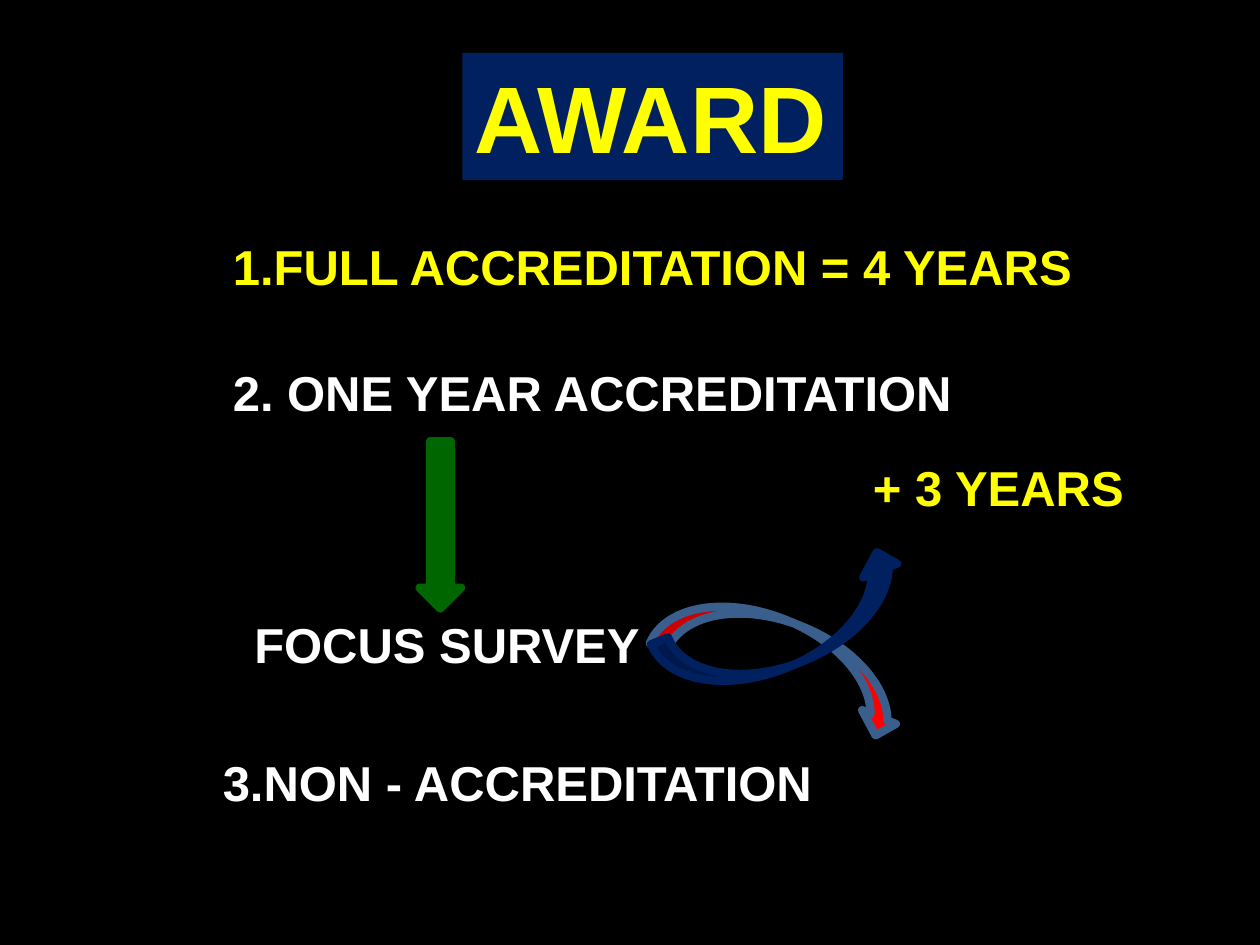
from dataclasses import dataclass

from lxml import etree
from pptx import Presentation
from pptx.dml.color import RGBColor
from pptx.enum.shapes import MSO_SHAPE
from pptx.enum.text import MSO_ANCHOR, MSO_AUTO_SIZE
from pptx.oxml.ns import qn
from pptx.util import Inches, Pt

RECTANGLE = MSO_SHAPE.RECTANGLE
CURVED_ARROW = MSO_SHAPE.CURVED_DOWN_ARROW
STRIPED_ARROW = MSO_SHAPE.STRIPED_RIGHT_ARROW
TOP = MSO_ANCHOR.TOP
GROW = MSO_AUTO_SIZE.SHAPE_TO_FIT_TEXT

BLACK, WHITE, YELLOW = "000000", "FFFFFF", "FFFF00"
NAVY, STEEL, RED, GREEN = "002060", "3A5F8C", "FF0000", "006600"
ARROW_LINE = 4.72
LABEL_HEIGHT = 0.57


@dataclass
class Label:
    text: str
    left: float
    top: float
    width: float
    color: str = WHITE
    wrap: bool = False


@dataclass
class Arrow:
    preset: int
    left: float
    top: float
    width: float
    height: float
    rotation: float
    fill: str
    line: str
    flipped: bool = False


def rgb(value: str) -> RGBColor:
    return RGBColor.from_string(value)


def write(shape, text: str, *, size: float = 28, color: str = WHITE,
          wrap: bool = False) -> None:
    frame = shape.text_frame
    frame.word_wrap = wrap
    frame.auto_size = GROW
    frame.vertical_anchor = TOP
    paragraph = frame.paragraphs[0]
    run = paragraph.add_run()
    run.text = text
    run.font.name = "Arial"
    run.font.size = Pt(size)
    run.font.bold = True
    run.font.color.rgb = rgb(color)


def draw_label(slide, label: Label) -> None:
    box = slide.shapes.add_textbox(Inches(label.left), Inches(label.top),
                                   Inches(label.width), Inches(LABEL_HEIGHT))
    write(box, label.text, color=label.color, wrap=label.wrap)


def draw_arrow(slide, arrow: Arrow) -> None:
    shape = slide.shapes.add_shape(
        arrow.preset, Inches(arrow.left), Inches(arrow.top),
        Inches(arrow.width), Inches(arrow.height))
    shape.shadow.inherit = False
    shape.rotation = arrow.rotation
    shape.fill.solid()
    shape.fill.fore_color.rgb = rgb(arrow.fill)
    shape.line.color.rgb = rgb(arrow.line)
    shape.line.width = Pt(ARROW_LINE)
    properties = shape._element.spPr
    etree.SubElement(properties.find(qn("a:ln")), qn("a:round"))
    if arrow.flipped:
        properties.find(qn("a:xfrm")).set("flipV", "1")


def draw_title(slide) -> None:
    title = slide.shapes.add_textbox(Inches(3.67), Inches(0.42),
                                     Inches(3.02), Inches(1.01))
    title.fill.solid()
    title.fill.fore_color.rgb = rgb(NAVY)
    write(title, "AWARD", size=54, color=YELLOW)


# Award levels and the paths that follow a focus survey, back to front
PARTS = [
    Label("1.FULL ACCREDITATION = 4 YEARS", 1.75, 1.83, 7.25, YELLOW, wrap=True),
    Label("2. ONE YEAR ACCREDITATION", 1.75, 2.83, 5.97),
    Label("3.NON - ACCREDITATION", 1.67, 5.92, 5.64, wrap=True),
    Arrow(CURVED_ARROW, 5.19, 4.94, 2.08, 0.58, 22.2, RED, STEEL),
    Label("+ 3 YEARS", 6.83, 3.58, 2.21, YELLOW),
    Arrow(CURVED_ARROW, 5.2, 4.7, 2.08, 0.58, 337.8, NAVY, NAVY, flipped=True),
    Label("FOCUS SURVEY", 1.92, 4.83, 3.29),
    Arrow(STRIPED_ARROW, 2.83, 4, 1.33, 0.33, 90, GREEN, GREEN),
]


def main() -> None:
    deck = Presentation()
    deck.slide_width, deck.slide_height = Inches(10), Inches(7.5)
    slide = deck.slides.add_slide(deck.slide_layouts[6])

    # Background and title
    slide.background.fill.solid()
    slide.background.fill.fore_color.rgb = rgb(BLACK)
    draw_title(slide)

    # Labels and arrows
    for part in PARTS:
        if isinstance(part, Label):
            draw_label(slide, part)
        else:
            draw_arrow(slide, part)

    deck.save("out.pptx")


if __name__ == "__main__":
    main()
